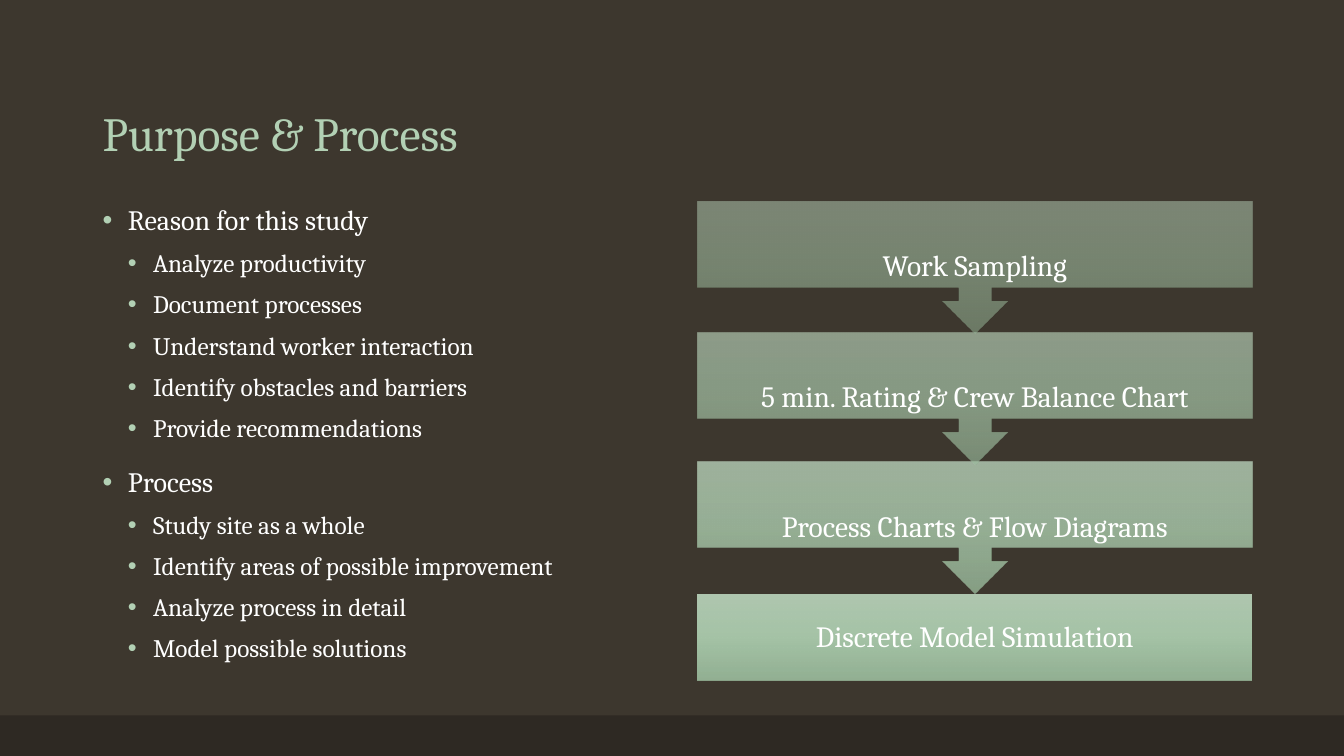
from dataclasses import dataclass

from lxml.etree import SubElement
from pptx import Presentation
from pptx.dml.color import RGBColor
from pptx.enum.shapes import MSO_SHAPE
from pptx.enum.text import MSO_ANCHOR, PP_ALIGN
from pptx.oxml import parse_xml
from pptx.oxml.ns import nsdecls, qn
from pptx.util import Cm, Pt

FONT = "Cambria"
BACKGROUND, FOOTER = "3D372E", "2E2923"
MINT, WHITE = "B2D0B4", "FFFFFF"
GRADIENT = ((0, "BCD6BE"), (50, "B0D2B3"), (100, "9BBC9D"))
STEP_LEFT, STEP_WIDTH = 17.58, 13.97


@dataclass
class Step:
    label: str
    top: float
    opacity: int
    height: float = 3.33
    shape: MSO_SHAPE = MSO_SHAPE.UP_ARROW_CALLOUT
    rotation: int = 180


@dataclass
class Topic:
    heading: str
    points: list[str]


STEPS = [
    Step("Work Sampling", 5.07, 50),
    Step("5 min. Rating & Crew Balance Chart", 8.37, 63),
    Step("Process Charts & Flow Diagrams", 11.63, 77),
    Step("Discrete Model Simulation", 14.98, 90, 2.17, MSO_SHAPE.RECTANGLE, 0),
]

TOPICS = [
    Topic("Reason for this study", [
        "Analyze productivity",
        "Document processes",
        "Understand worker interaction",
        "Identify obstacles and barriers",
        "Provide recommendations",
    ]),
    Topic("Process", [
        "Study site as a whole",
        "Identify areas of possible improvement",
        "Analyze process in detail",
        "Model possible solutions",
    ]),
]


def color(value: str) -> RGBColor:
    return RGBColor.from_string(value)


def add_text_box(shapes, left: float, top: float, width: float, height: float,
                 anchor: MSO_ANCHOR):
    box = shapes.add_textbox(Cm(left), Cm(top), Cm(width), Cm(height))
    frame = box.text_frame
    frame.word_wrap = True
    frame.vertical_anchor = anchor
    return frame


def write(para, text: str, size: int, value: str = WHITE) -> None:
    para.text = text
    para.line_spacing = 0.9
    for span in para.runs:
        span.font.name = FONT
        span.font.size = Pt(size)
        span.font.color.rgb = color(value)


def add_bullet(para, level: int) -> None:
    para.level = level
    properties = para._p.get_or_add_pPr()
    properties.set("marL", str(Cm(0.635 * (level + 1))))
    properties.set("indent", str(-Cm(0.635)))
    bullet_color = SubElement(properties, qn("a:buClr"))
    SubElement(bullet_color, qn("a:srgbClr"), val=MINT)
    SubElement(properties, qn("a:buFont"), typeface="Arial")
    SubElement(properties, qn("a:buChar"), char="•")


def fill_gradient(shape, opacity: int) -> None:
    stops = "".join(
        f'<a:gs pos="{position * 1000}"><a:srgbClr val="{value}">'
        f'<a:alpha val="{opacity * 1000}"/></a:srgbClr></a:gs>'
        for position, value in GRADIENT
    )
    gradient = parse_xml(
        f'<a:gradFill {nsdecls("a")} rotWithShape="0"><a:gsLst>{stops}</a:gsLst>'
        '<a:lin ang="5400000" scaled="0"/></a:gradFill>'
    )
    shape._element.spPr.find(qn("a:prstGeom")).addnext(gradient)


def add_step(shapes, step: Step) -> None:
    shape = shapes.add_shape(step.shape, Cm(STEP_LEFT), Cm(step.top),
                             Cm(STEP_WIDTH), Cm(step.height))
    shape.rotation = step.rotation
    shape.shadow.inherit = False
    shape.line.fill.background()
    fill_gradient(shape, step.opacity)

    # The label stays upright, apart from the turned callout
    frame = add_text_box(shapes, STEP_LEFT, step.top, STEP_WIDTH, step.height,
                         MSO_ANCHOR.MIDDLE)
    frame.margin_left = frame.margin_right = Cm(0.41)
    frame.margin_top = frame.margin_bottom = Cm(0.41)
    para = frame.paragraphs[0]
    write(para, step.label, 21)
    para.alignment = PP_ALIGN.CENTER


def add_topics(shapes, topics: list[Topic]) -> None:
    frame = add_text_box(shapes, 2.34, 5.08, 13.97, 12.09, MSO_ANCHOR.TOP)
    lines = [
        (text, level)
        for topic in topics
        for text, level in [(topic.heading, 0), *((point, 1) for point in topic.points)]
    ]
    for index, (text, level) in enumerate(lines):
        para = frame.add_paragraph() if index else frame.paragraphs[0]
        write(para, text, 18 if level else 20)
        para.space_before = Pt(10 if level else 18)
        add_bullet(para, level)


def main() -> None:
    deck = Presentation()
    deck.slide_width, deck.slide_height = Cm(33.87), Cm(19.05)
    page = deck.slides.add_slide(deck.slide_layouts[6])

    # Background and footer band
    page.background.fill.solid()
    page.background.fill.fore_color.rgb = color(BACKGROUND)
    band = page.shapes.add_shape(MSO_SHAPE.RECTANGLE, Cm(0), Cm(18.03),
                                 deck.slide_width, Cm(1.02))
    band.shadow.inherit = False
    band.fill.solid()
    band.fill.fore_color.rgb = color(FOOTER)
    band.line.fill.background()

    # Title
    title = add_text_box(page.shapes, 2.34, 1.02, 29.21, 3.17, MSO_ANCHOR.BOTTOM)
    write(title.paragraphs[0], "Purpose & Process", 34, MINT)

    # Process steps, stacked from the last to the first
    process = page.shapes.add_group_shape()
    for step in reversed(STEPS):
        add_step(process.shapes, step)

    # Bulleted topics
    add_topics(page.shapes, TOPICS)

    deck.save("out.pptx")


if __name__ == "__main__":
    main()
